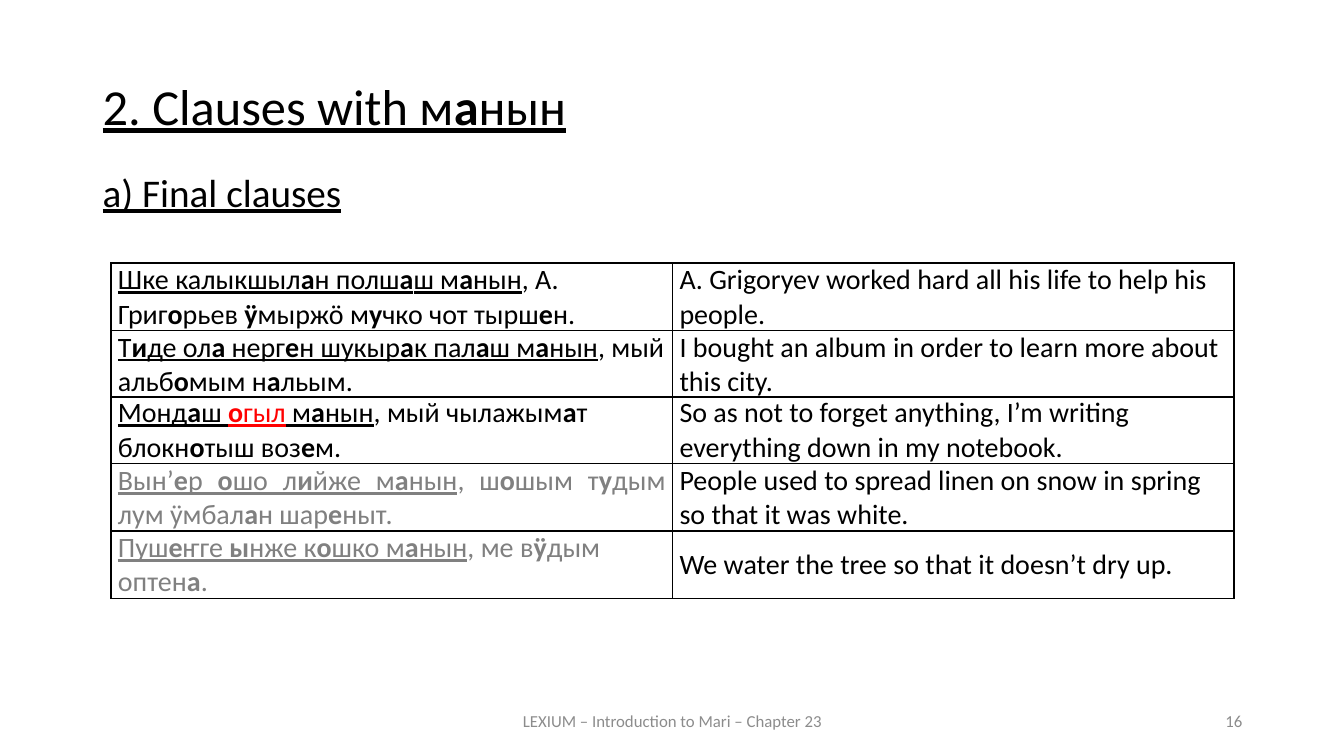
import lxml.etree
import pptx
import pptx.dml.color
import pptx.enum.text
import pptx.oxml.ns
import pptx.util

Inches = pptx.util.Inches
Pt = pptx.util.Pt
ALIGN = pptx.enum.text.PP_ALIGN
ANCHOR = pptx.enum.text.MSO_ANCHOR

FONT = "Calibri"
BLACK, GREY, RED, FOOTER_GREY = "000000", "808080", "FF0000", "8C8C8C"

# Markup: * toggles bold, _ toggles underline, ~ toggles red.
# Headings: markup, box, size, alignment, space before
HEADINGS = [
    ("_2. Clauses with м*а*нын_", (0.92, 0.76, 11.5, 0.83), 36, ALIGN.JUSTIFY, 12),
    ("_a) Final clauses_", (0.92, 1.67, 11.5, 0.58), 28, ALIGN.LEFT, 10),
]
FOOTERS = [
    ("LEXIUM – Introduction to Mari – Chapter 23", (4.42, 6.95, 4.5, 0.4), ALIGN.CENTER),
    ("16", (9.42, 6.95, 3, 0.4), ALIGN.RIGHT),
]
# Tables: top, then rows of Mari markup, Mari colour, Mari alignment, English
TABLES = [
    (2.61, [
        ("_Шке калыкшыл*а*н полш*а*ш м*а*нын_, А. Григ*о*рьев *ӱ*мыржӧ м*у*чко чот тырш*е*н.",
         BLACK, ALIGN.LEFT,
         "A. Grigoryev worked hard all his life to help his people."),
        ("_Т*и*де ол*а* нерг*е*н шукыр*а*к пал*а*ш м*а*нын_, мый альб*о*мым н*а*льым.",
         BLACK, ALIGN.LEFT,
         "I bought an album in order to learn more about this city."),
    ]),
    (3.93, [
        ("_Монд*а*ш ~*о*гыл~ м*а*нын_, мый чылажым*а*т блокн*о*тыш воз*е*м.",
         BLACK, ALIGN.LEFT,
         "So as not to forget anything, I’m writing everything down in my notebook."),
    ]),
    (4.6, [
        ("_Вын’*е*р *о*шо л*и*йже м*а*нын_, ш*о*шым т*у*дым лум ӱмбал*а*н шар*е*ныт.",
         GREY, ALIGN.JUSTIFY,
         "People used to spread linen on snow in spring so that it was white."),
        ("_Пуш*е*ҥге *ы*нже к*о*шко м*а*нын_, ме в*ӱ*дым оптен*а*.",
         GREY, ALIGN.LEFT,
         "We water the tree so that it doesn’t dry up."),
    ]),
]
TABLE_LEFT, COLUMN_WIDTH, ROW_HEIGHT = 1.1, 5.57, 0.665


def rgb(color):
    return pptx.dml.color.RGBColor.from_string(color)


def split_markup(markup):
    """Yield (text, bold, underline, red) for each stretch of equal style."""
    state = {"*": False, "_": False, "~": False}
    text = ""
    for character in markup:
        if character in state:
            if text:
                yield text, state["*"], state["_"], state["~"]
            state[character] = not state[character]
            text = ""
        else:
            text += character
    if text:
        yield text, state["*"], state["_"], state["~"]


def write(paragraph, markup, size, color, alignment):
    paragraph.alignment = alignment
    for text, bold, underline, red in split_markup(markup):
        run = paragraph.add_run()
        run.text = text
        run.font.name = FONT
        run.font.size = Pt(size)
        run.font.bold = bold
        run.font.underline = underline
        run.font.color.rgb = rgb(RED if red else color)


def add_text(slide, markup, box, size, color, alignment, anchor):
    shape = slide.shapes.add_textbox(*map(Inches, box))
    shape.text_frame.word_wrap = True
    shape.text_frame.vertical_anchor = anchor
    paragraph = shape.text_frame.paragraphs[0]
    write(paragraph, markup, size, color, alignment)
    return paragraph


def add_borders(cell):
    qn = pptx.oxml.ns.qn
    properties = cell._tc.get_or_add_tcPr()
    for side in ("a:lnL", "a:lnR", "a:lnT", "a:lnB"):
        line = lxml.etree.SubElement(properties, qn(side), w=str(Pt(1)))
        fill = lxml.etree.SubElement(line, qn("a:solidFill"))
        lxml.etree.SubElement(fill, qn("a:srgbClr"), val=BLACK)


def fill_cell(cell, markup, color, alignment, anchor):
    add_borders(cell)
    cell.fill.background()
    cell.margin_left = cell.margin_right = Inches(0.07)
    cell.margin_top = cell.margin_bottom = 0
    cell.vertical_anchor = anchor
    write(cell.text_frame.paragraphs[0], markup, 20, color, alignment)


def add_examples(slide, top, rows):
    table = slide.shapes.add_table(
        len(rows), 2, Inches(TABLE_LEFT), Inches(top),
        Inches(2 * COLUMN_WIDTH), Inches(ROW_HEIGHT * len(rows))).table
    table.first_row = table.horz_banding = False
    for index, (mari, color, alignment, english) in enumerate(rows):
        anchor = ANCHOR.TOP if alignment == ALIGN.JUSTIFY else ANCHOR.MIDDLE
        fill_cell(table.cell(index, 0), mari, color, alignment, anchor)
        fill_cell(table.cell(index, 1), english, BLACK, ALIGN.LEFT, ANCHOR.MIDDLE)


def main():
    presentation = pptx.Presentation()
    presentation.slide_width = Inches(13.33)
    presentation.slide_height = Inches(7.5)
    slide = presentation.slides.add_slide(presentation.slide_layouts[6])
    for markup, box, size, alignment, space_before in HEADINGS:
        paragraph = add_text(slide, markup, box, size, BLACK, alignment, ANCHOR.TOP)
        paragraph.line_spacing = 0.9
        paragraph.space_before = Pt(space_before)
    for text, box, alignment in FOOTERS:
        add_text(slide, text, box, 12, FOOTER_GREY, alignment, ANCHOR.MIDDLE)
    for top, rows in TABLES:
        add_examples(slide, top, rows)
    presentation.save("out.pptx")


if __name__ == "__main__":
    main()
